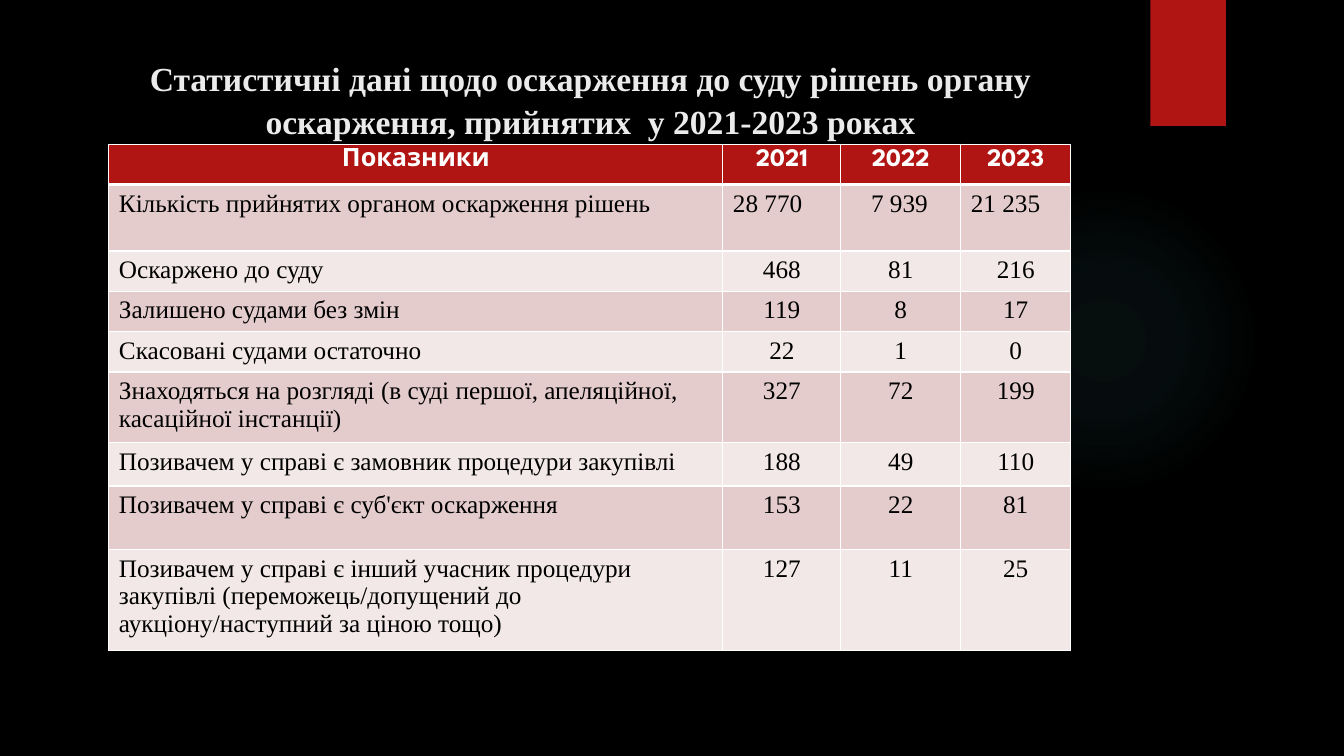
from dataclasses import dataclass

from lxml import etree
from pptx import Presentation, util as u
from pptx.dml.color import RGBColor
from pptx.enum import shapes, text
from pptx.oxml import parse_xml
from pptx.oxml.ns import nsdecls

UNIT = u.Inches(1 / 12)
SERIF = "Times New Roman"
HEADING = "League Spartan"
BLACK, WHITE, RED, TITLE_INK = "000000", "FFFFFF", "B01513", "EBEBEB"
BANDS = ("E4CCCC", "F2E8E7")
GLOW = "50B9C1"
COLUMNS = (73.08, 14.04, 14.28, 13.08)
ALIGN = text.PP_ALIGN


@dataclass(frozen=True)
class Area:
    column: float
    row: float
    columns: float
    rows: float

    def box(self) -> tuple[int, ...]:
        return tuple(grid(n) for n in (self.column, self.row, self.columns, self.rows))


@dataclass(frozen=True)
class Style:
    font: str
    size: int
    ink: str
    bold: bool = False


@dataclass(frozen=True)
class Indicator:
    label: str
    counts: tuple[str, str, str]
    rows: float = 4.56


@dataclass(frozen=True)
class Placement:
    align: ALIGN
    margin: float = 0
    indent: float = 0


TITLE_STYLE = Style(SERIF, 24, TITLE_INK, True)
HEADER_STYLE = Style(HEADING, 18, WHITE, True)
BODY_STYLE = Style(SERIF, 18, BLACK)

INDICATORS = (
    Indicator("Показники", ("2021", "2022", "2023")),
    Indicator("Кількість прийнятих органом оскарження рішень", ("28 770", "7 939", "21 235"), 7.92),
    Indicator("Оскаржено до суду", ("468", "81", "216")),
    Indicator("Залишено судами без змін", ("119", "8", "17")),
    Indicator("Скасовані судами остаточно", ("22", "1", "0")),
    Indicator("Знаходяться на розгляді (в суді першої, апеляційної, касаційної інстанції)",
              ("327", "72", "199"), 7.92),
    Indicator("Позивачем у справі є замовник процедури закупівлі", ("188", "49", "110"), 5.16),
    Indicator("Позивачем у справі є суб'єкт оскарження", ("153", "22", "81"), 7.56),
    Indicator("Позивачем у справі є інший учасник процедури закупівлі "
              "(переможець/допущений до аукціону/наступний за ціною тощо)",
              ("127", "11", "25"), 11.16),
)

DECISIONS_ROW = (
    Placement(ALIGN.JUSTIFY),
    Placement(ALIGN.LEFT, 2.4, -2.4),
    Placement(ALIGN.LEFT, 2.4),
    Placement(ALIGN.LEFT),
)


def grid(count: float) -> int:
    return round(count * UNIT)


def colour(value: str) -> RGBColor:
    return RGBColor.from_string(value)


def write(paragraph, words: str, style: Style, placement: Placement) -> None:
    paragraph.text = words
    paragraph.alignment = placement.align
    if placement.margin:
        properties = paragraph._p.get_or_add_pPr()
        properties.set("marL", str(grid(placement.margin)))
        properties.set("indent", str(grid(placement.indent)))
    font = paragraph.font
    font.name, font.size, font.bold = style.font, u.Pt(style.size), style.bold
    font.color.rgb = colour(style.ink)


def draw_shape(slide, kind: shapes.MSO_SHAPE, area: Area, fill: str):
    shape = slide.shapes.add_shape(kind, *area.box())
    shape.shadow.inherit = False
    shape.fill.solid()
    shape.fill.fore_color.rgb = colour(fill)
    shape.line.fill.background()
    return shape


def draw_glow(slide, area: Area) -> None:
    glow = draw_shape(slide, shapes.MSO_SHAPE.OVAL, area, GLOW)
    stops = "".join(
        f'<a:gs pos="{place * 1000}"><a:srgbClr val="{GLOW}">'
        f'<a:alpha val="{opacity * 1000}"/></a:srgbClr></a:gs>'
        for place, opacity in ((0, 7), (36, 6), (69, 0))
    )
    gradient = parse_xml(
        f'<a:gradFill {nsdecls("a")}><a:gsLst>{stops}</a:gsLst><a:path path="circle">'
        '<a:fillToRect l="50000" t="50000" r="50000" b="50000"/></a:path></a:gradFill>'
    )
    properties = glow._element.spPr
    properties.replace(properties.find("{*}solidFill"), gradient)


def draw_ribbon(slide, area: Area) -> None:
    ribbon = draw_shape(slide, shapes.MSO_SHAPE.RECTANGLE, area, RED)
    ribbon._element.spPr.find("{*}effectLst").append(parse_xml(
        f'<a:outerShdw {nsdecls("a")} blurRad="{u.Pt(3)}" dist="{u.Pt(2)}" dir="5400000">'
        f'<a:srgbClr val="{BLACK}"><a:alpha val="45000"/></a:srgbClr></a:outerShdw>'
    ))


def draw_title(slide, area: Area, words: str) -> None:
    frame = slide.shapes.add_textbox(*area.box()).text_frame
    frame.word_wrap = True
    paragraph = frame.paragraphs[0]
    paragraph.line_spacing = 1.07
    write(paragraph, words, TITLE_STYLE, Placement(ALIGN.CENTER))


def rule_cell(cell, top: int, bottom: int) -> None:
    properties = cell._tc.get_or_add_tcPr()
    for side, width in (("L", 1), ("R", 1), ("T", top), ("B", bottom)):
        line = etree.SubElement(properties, properties.tag.replace("tcPr", f"ln{side}"), w=str(u.Pt(width)))
        line.append(parse_xml(f'<a:solidFill {nsdecls("a")}><a:srgbClr val="{WHITE}"/></a:solidFill>'))


def place_cell(row: int, column: int) -> Placement:
    if row == 1:
        return DECISIONS_ROW[column]
    return Placement(ALIGN.LEFT if row and not column else ALIGN.CENTER)


def draw_statistics(slide, column: float, row: float) -> None:
    area = Area(column, row, sum(COLUMNS), sum(item.rows for item in INDICATORS))
    table = slide.shapes.add_table(len(INDICATORS), len(COLUMNS), *area.box()).table
    table.horz_banding = False
    for part, width in zip(table.columns, COLUMNS):
        part.width = grid(width)
    for r, item in enumerate(INDICATORS):
        table.rows[r].height = grid(item.rows)
        for c, words in enumerate((item.label, *item.counts)):
            cell = table.cell(r, c)
            rule_cell(cell, 3 if r == 1 else 1, 3 if r == 0 else 1)
            cell.fill.solid()
            cell.fill.fore_color.rgb = colour(BANDS[(r - 1) % 2] if r else RED)
            write(cell.text_frame.paragraphs[0], words,
                  BODY_STYLE if r else HEADER_STYLE, place_cell(r, c))


def main() -> None:
    deck = Presentation()
    deck.slide_width, deck.slide_height = u.Inches(13.33), u.Inches(7.5)
    slide = deck.slides.add_slide(deck.slide_layouts[6])
    slide.background.fill.solid()
    slide.background.fill.fore_color.rgb = colour(BLACK)
    draw_glow(slide, Area(112.92, 21.96, 36.96, 36.96))
    draw_ribbon(slide, Area(136.92, 0, 9, 15))
    draw_title(slide, Area(8.52, 6, 123.48, 18.36),
               "Статистичні дані щодо оскарження до суду рішень органу "
               "оскарження, прийнятих  у 2021-2023 роках")
    draw_statistics(slide, 12.96, 17.16)
    deck.save("out.pptx")


if __name__ == "__main__":
    main()
